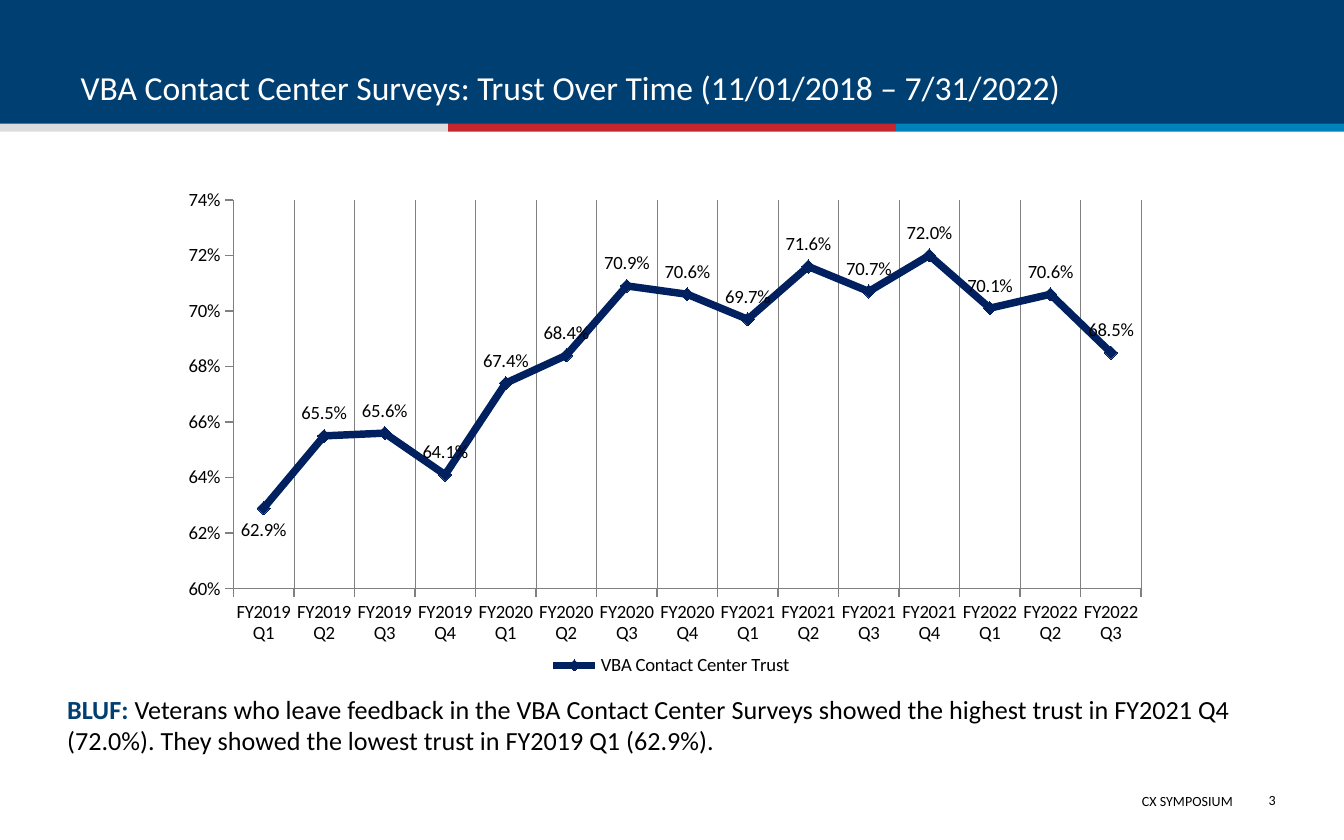
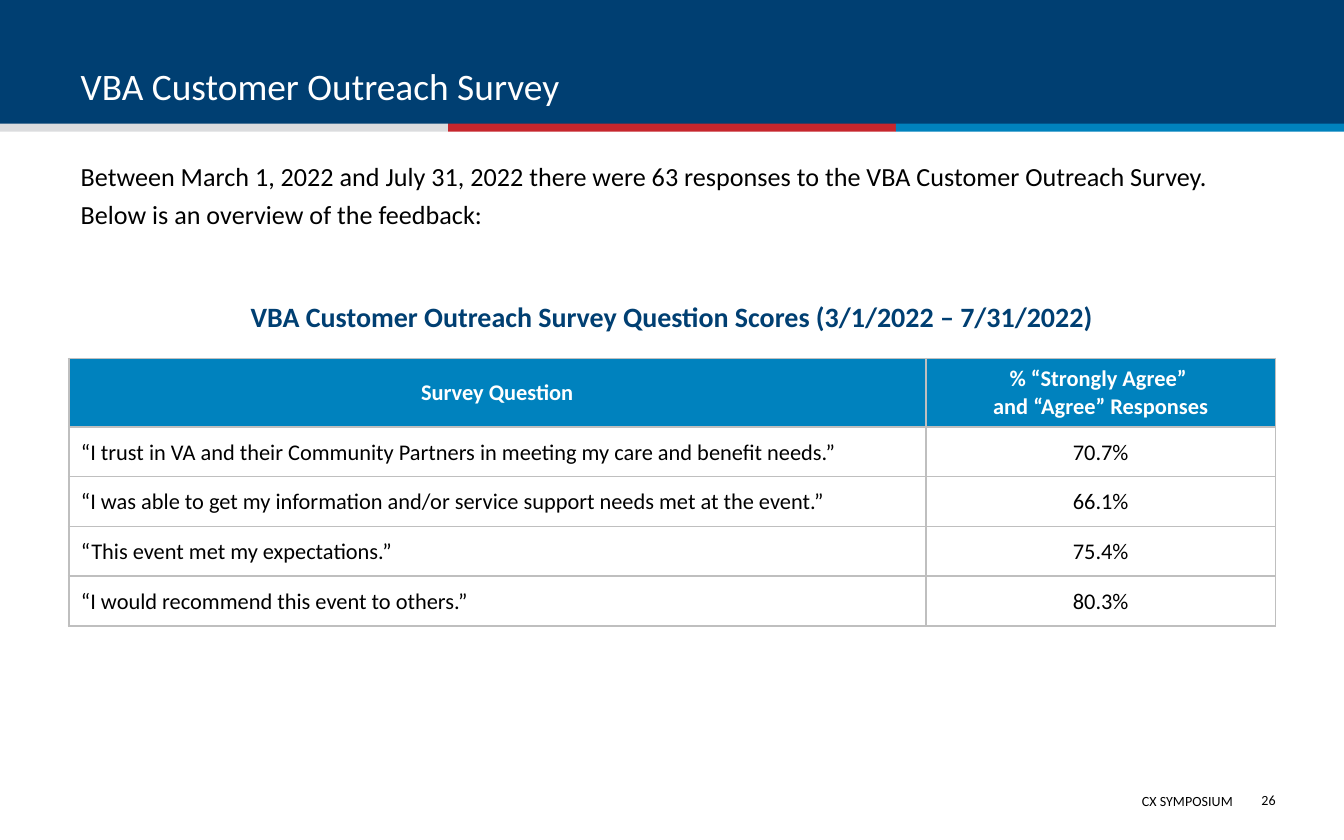
from lxml import etree
from pptx import Presentation
from pptx.chart.data import CategoryChartData
from pptx.dml.color import RGBColor
from pptx.enum import chart as ch, shapes, text
from pptx.oxml import ns, parse_xml
from pptx.util import Cm, Pt

FONT = "Calibri"
NAVY, BLUE, RED, SILVER = "003F72", "0082BE", "C6262D", "DBDCDE"
LINE_NAVY, GRAY, BORDER = "002060", "808080", "BFBFBF"
BLACK, WHITE = "000000", "FFFFFF"

# Boxes in cm: left, top, width, height
PAGE_W, PAGE_H = 25.4, 15.88
TITLE = (1.27, 0.28, 22.86, 1.88)
FOOTER = (10.52, 14.86, 13.03, 0.58)
PAGE_NUMBER = (23.42, 14.71, 0.69, 0.84)
TREND = (3.45, 3.38, 18.47, 9.5)
BLUF = (1.27, 13.08, 22.81, 1.22)
INTRO = (1.27, 2.79, 22.86, 1.32)
SCORES_HEADING = (2.54, 5.54, 20.32, 0.89)
SCORES = (1.3, 6.78, 22.81, 5.05)

QUARTERS = [f"FY{year} Q{q}" for year in range(2019, 2023) for q in range(1, 5)][:15]
TRUST = [0.629, 0.655, 0.656, 0.641, 0.674, 0.684, 0.709, 0.706,
         0.697, 0.716, 0.707, 0.72, 0.701, 0.706, 0.685]

HEADERS = ("Survey Question", "% “Strongly Agree” \nand “Agree” Responses")
ANSWERS = [
    ("“I trust in VA and their Community Partners in meeting my care and benefit needs.”", "70.7%"),
    ("“I was able to get my information and/or service support needs met at the event.”", "66.1%"),
    ("“This event met my expectations.”", "75.4%"),
    ("“I would recommend this event to others.”", "80.3%"),
]


# Shared helpers
def rgb(hex_color):
    return RGBColor.from_string(hex_color)


def lengths(box):
    return [Cm(value) for value in box]


def style_font(font, size, color=BLACK, bold=False):
    font.name, font.size, font.bold = FONT, Pt(size), bold
    font.color.rgb = rgb(color)


def write(frame, words, size=12, color=BLACK, bold=False, align="LEFT", anchor=None, insets=None):
    """Append a run to the frame's first paragraph; a newline is a line break."""
    paragraph = frame.paragraphs[0]
    paragraph.alignment = getattr(text.PP_ALIGN, align)
    if anchor:
        frame.vertical_anchor = getattr(text.MSO_ANCHOR, anchor)
    if insets:
        (frame.margin_left, frame.margin_top,
         frame.margin_right, frame.margin_bottom) = lengths(insets)
    for i, line in enumerate(words.split("\n")):
        if i:
            paragraph.add_line_break()
        run = paragraph.add_run()
        run.text = line
        style_font(run.font, size, color, bold)
    return paragraph


def text_box(slide, box):
    frame = slide.shapes.add_textbox(*lengths(box)).text_frame
    frame.word_wrap = True
    return frame


def fill_placeholder(placeholder, box, words, **fmt):
    (placeholder.left, placeholder.top,
     placeholder.width, placeholder.height) = lengths(box)
    placeholder.text_frame.auto_size = text.MSO_AUTO_SIZE.NONE
    return write(placeholder.text_frame, words, **fmt)


def bar(slide, box, color):
    shape = slide.shapes.add_shape(shapes.MSO_SHAPE.RECTANGLE, *lengths(box))
    shape.shadow.inherit = False
    shape.fill.solid()
    shape.fill.fore_color.rgb = rgb(color)
    shape.line.fill.background()


# Frame shared by all slides, kept on the slide master
def master_frame(prs, slide):
    first = len(slide.shapes)
    bar(slide, (0, 0, PAGE_W, 2.41), NAVY)
    third = PAGE_W / 3
    for i, color in enumerate((SILVER, RED, "0082BD")):
        bar(slide, (i * third, 2.34, third, 0.15), color)
    write(text_box(slide, FOOTER), "CX SYMPOSIUM", size=7.5, align="RIGHT")
    tree = prs.slide_master.shapes._spTree
    for i, shape in enumerate(list(slide.shapes)[first:]):
        shape._element.nvSpPr.cNvPr.set("id", str(100 + i))
        tree.insert(2 + i, shape._element)


def heading(slide, words, size, number):
    fill_placeholder(slide.shapes.title, TITLE, words, size=size, color=WHITE, anchor="BOTTOM")
    write(text_box(slide, PAGE_NUMBER), str(number), size=7.5, align="RIGHT",
          anchor="MIDDLE", insets=(0, 0, 0, 0))


# Trust chart
def set_plot_area(chart, x, y, w, h):
    values = {"layoutTarget": "inner", "xMode": "edge", "yMode": "edge",
              "x": x, "y": y, "w": w, "h": h}
    parts = "".join(f'<c:{tag} val="{value}"/>' for tag, value in values.items())
    area = chart._chartSpace.chart.plotArea
    for old in area.findall(ns.qn("c:layout")):
        area.remove(old)
    area.insert(0, parse_xml(f'<c:layout {ns.nsdecls("c")}><c:manualLayout>{parts}'
                             '</c:manualLayout></c:layout>'))


def trust_chart(slide, box):
    data = CategoryChartData(number_format="0.0%")
    data.categories = QUARTERS
    data.add_series("VBA Contact Center Trust", TRUST)
    chart = slide.shapes.add_chart(ch.XL_CHART_TYPE.LINE_MARKERS, *lengths(box), data).chart
    chart.has_title = False
    style_font(chart.font, 10)
    chart.has_legend = True
    chart.legend.position = ch.XL_LEGEND_POSITION.BOTTOM
    chart.legend.include_in_layout = False
    style_font(chart.legend.font, 10)
    set_plot_area(chart, 0.052, 0.042, 0.929, 0.774)

    # Axes
    quarters, share = chart.category_axis, chart.value_axis
    for axis in (quarters, share):
        axis.major_tick_mark = ch.XL_TICK_MARK.OUTSIDE
        axis.format.line.color.rgb = rgb(GRAY)
        axis.format.line.width = Pt(0.75)
        style_font(axis.tick_labels.font, 10)
    quarters.has_major_gridlines = True
    quarters.major_gridlines.format.line.color.rgb = rgb(GRAY)
    quarters.major_gridlines.format.line.width = Pt(0.25)
    share.has_major_gridlines = False
    share.minimum_scale, share.maximum_scale, share.major_unit = 0.6, 0.74, 0.02
    share.tick_labels.number_format = "0%"
    share.tick_labels.number_format_is_linked = False

    # Line, markers and labels
    plot = chart.plots[0]
    plot.vary_by_categories = False
    trust = plot.series[0]
    trust.smooth = False
    trust.format.line.color.rgb = rgb(LINE_NAVY)
    trust.format.line.width = Pt(4)
    trust.marker.style, trust.marker.size = ch.XL_MARKER_STYLE.DIAMOND, 7
    trust.marker.format.fill.solid()
    trust.marker.format.fill.fore_color.rgb = rgb(LINE_NAVY)
    trust.marker.format.line.color.rgb = rgb(LINE_NAVY)
    labels = trust.data_labels
    labels.show_value = True
    labels.position = ch.XL_LABEL_POSITION.ABOVE
    labels.number_format, labels.number_format_is_linked = "0.0%", False
    style_font(labels.font, 10)
    lowest = trust.points[TRUST.index(min(TRUST))].data_label
    style_font(lowest.font, 10)
    lowest.position = ch.XL_LABEL_POSITION.BELOW


def bottom_line(slide, box):
    frame = text_box(slide, box)
    write(frame, "BLUF: ", size=14, color=NAVY, bold=True, insets=(0, 0.03, 0, 0))
    write(frame, "Veterans who leave feedback in the VBA Contact Center Surveys showed the "
          "highest trust in FY2021 Q4 (72.0%). They showed the lowest trust in "
          "FY2019 Q1 (62.9%).", size=14).space_before = Pt(0.8)


# Survey score table
def border_cell(cell):
    props = cell._tc.get_or_add_tcPr()
    for i, side in enumerate(("lnL", "lnR", "lnT", "lnB")):
        line = etree.Element(ns.qn(f"a:{side}"), w=str(Pt(1)))
        fill = etree.SubElement(line, ns.qn("a:solidFill"))
        etree.SubElement(fill, ns.qn("a:srgbClr"), val=BORDER)
        props.insert(i, line)


def score_table(slide, box):
    rows = [HEADERS, *ANSWERS]
    width, height, row_height = box[2], box[3], 0.94
    table = slide.shapes.add_table(len(rows), 2, *lengths(box)).table
    table.horz_banding = False
    for column, part in zip(table.columns, (0.71, 0.29)):
        column.width = Cm(width * part)
    for r, row in enumerate(rows):
        is_header = r == 0
        table.rows[r].height = Cm(height - row_height * len(ANSWERS) if is_header else row_height)
        for c, words in enumerate(row):
            cell = table.cell(r, c)
            cell.fill.solid()
            cell.fill.fore_color.rgb = rgb(BLUE if is_header else WHITE)
            border_cell(cell)
            cell.vertical_anchor = text.MSO_ANCHOR.MIDDLE
            if not is_header:
                cell.margin_left = Cm(0.03 if c else 0.23)
                cell.margin_top = cell.margin_right = Cm(0.03)
                cell.margin_bottom = 0
            write(cell.text_frame, words, bold=is_header, color=WHITE if is_header else BLACK,
                  align="CENTER" if is_header or c else "LEFT")


def survey_intro(slide, box):
    paragraph = fill_placeholder(
        slide.placeholders[1], box,
        "Between March 1, 2022 and July 31, 2022 there were 63 responses to the VBA Customer "
        "Outreach Survey. Below is an overview of the feedback:", size=14, anchor="TOP")
    paragraph.line_spacing = 1.2
    paragraph.space_before, paragraph.space_after = Pt(2.8), Pt(6)
    props = paragraph._p.get_or_add_pPr()
    props.set("marL", "0")
    props.set("indent", "0")
    etree.SubElement(props, ns.qn("a:buNone"))


# Slides
def trust_slide(prs):
    slide = prs.slides.add_slide(prs.slide_layouts[5])
    master_frame(prs, slide)
    heading(slide, "VBA Contact Center Surveys: Trust Over Time (11/01/2018 – 7/31/2022)", 18, 3)
    bottom_line(slide, BLUF)
    trust_chart(slide, TREND)


def outreach_slide(prs):
    slide = prs.slides.add_slide(prs.slide_layouts[1])
    heading(slide, "VBA Customer Outreach Survey", 20, 26)
    survey_intro(slide, INTRO)
    score_table(slide, SCORES)
    write(text_box(slide, SCORES_HEADING),
          "VBA Customer Outreach Survey Question Scores (3/1/2022 – 7/31/2022)",
          size=15, color=NAVY, bold=True, align="CENTER")


def main():
    prs = Presentation()
    prs.slide_width, prs.slide_height = Cm(PAGE_W), Cm(PAGE_H)
    trust_slide(prs)
    outreach_slide(prs)
    prs.save("out.pptx")


if __name__ == "__main__":
    main()
